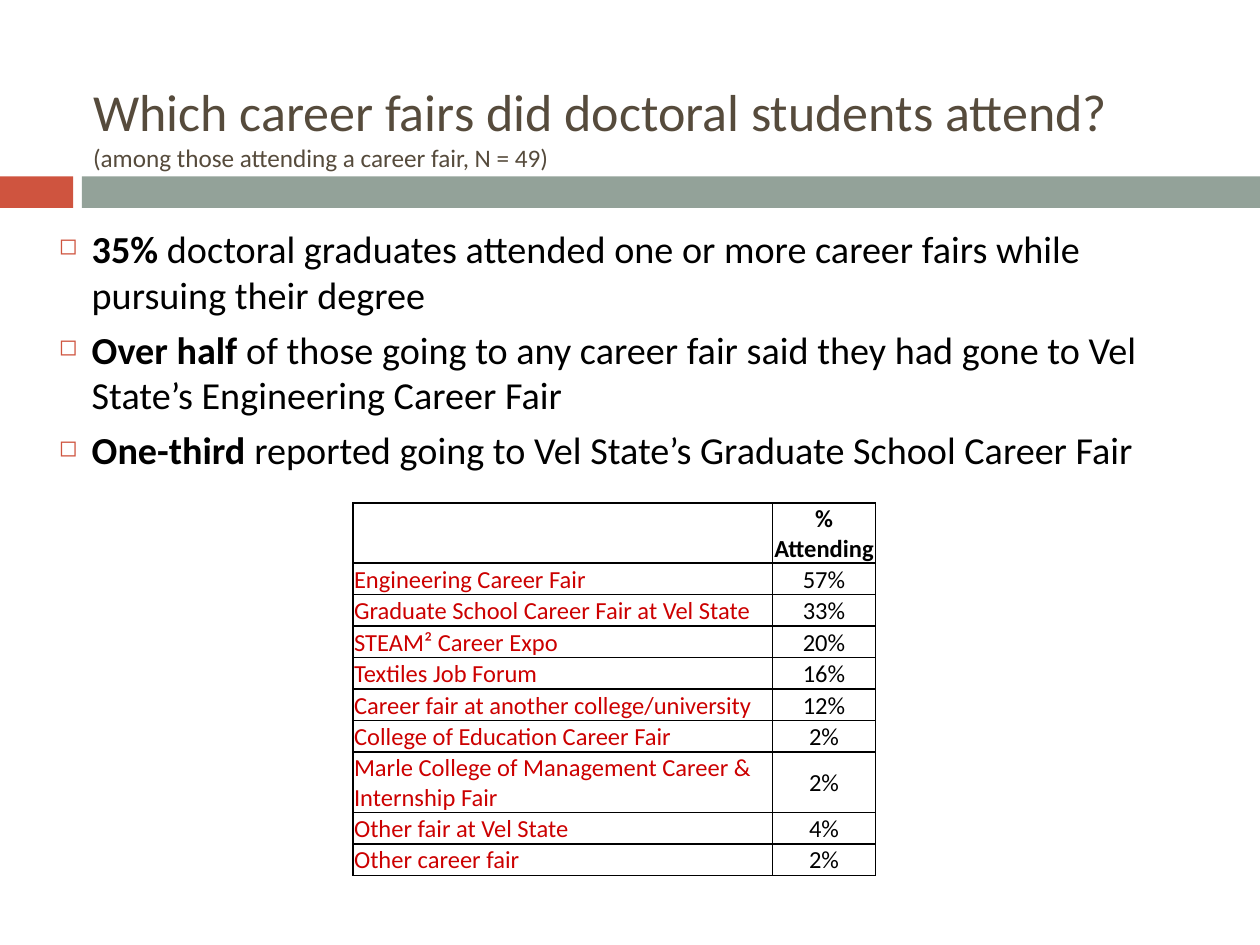
from lxml import etree
from pptx import Presentation, util as u
from pptx.dml.color import RGBColor
from pptx.enum import shapes, text
from pptx.oxml import ns

FONT = "Calibri"
BROWN, RED, SAGE = "564B3C", "CF543F", "93A299"
BLACK, LINK = "000000", "CC0000"

TITLE = "Which career fairs did doctoral students attend?"
NOTE = "(among those attending a career fair, N = 49)"
POINTS = [
    ("35%", " doctoral graduates attended one or more career fairs while pursuing their degree"),
    ("Over half", " of those going to any career fair said they had gone to Vel State’s Engineering Career Fair"),
    ("One-third", " reported going to Vel State’s Graduate School Career Fair"),
]
FAIRS = [
    ("", "% Attending"),
    ("Engineering Career Fair", "57%"),
    ("Graduate School Career Fair at Vel State", "33%"),
    ("STEAM² Career Expo", "20%"),
    ("Textiles Job Forum", "16%"),
    ("Career fair at another college/university", "12%"),
    ("College of Education Career Fair", "2%"),
    ("Marle College of Management Career & Internship Fair", "2%"),
    ("Other fair at Vel State", "4%"),
    ("Other career fair", "2%"),
]
BARS = [(0, 0.58, RED), (0.65, 9.35, SAGE)]
COLS = (3.33, 0.82)
HEAD, ROW = 0.48, 0.25


def color(code):
    return RGBColor.from_string(code)


def write(para, words, size=14, ink=BLACK, bold=False, align=text.PP_ALIGN.LEFT):
    para.alignment = align
    run = para.add_run()
    run.text = words
    font = run.font
    font.name, font.size, font.bold = FONT, u.Pt(size), bold
    font.color.rgb = color(ink)


def box(left, top, width, height, anchor):
    frame = slide.shapes.add_textbox(*map(u.Inches, (left, top, width, height))).text_frame
    frame.word_wrap = True
    frame.vertical_anchor = anchor
    return frame


def child(node, tag, **attrs):
    return etree.SubElement(node, ns.qn(tag), attrs)


def bullet(para):
    props = para._p.get_or_add_pPr()
    props.set("marL", str(u.Inches(0.26)))
    props.set("indent", str(-u.Inches(0.26)))
    child(child(props, "a:buClr"), "a:srgbClr", val=RED)
    child(props, "a:buSzPct", val="60000")
    child(props, "a:buChar", char="◻")


def border(cell):
    props = cell._tc.get_or_add_tcPr()
    for n, side in enumerate(("a:lnL", "a:lnR", "a:lnT", "a:lnB")):
        line = etree.Element(ns.qn(side), w=str(u.Pt(1)))
        child(child(line, "a:solidFill"), "a:srgbClr", val=BLACK)
        props.insert(n, line)


prs = Presentation()
prs.slide_width, prs.slide_height = u.Inches(10), u.Inches(7.5)
slide = prs.slides.add_slide(prs.slide_layouts[6])

# Divider bars
for left, width, fill in BARS:
    bar = slide.shapes.add_shape(shapes.MSO_SHAPE.RECTANGLE, u.Inches(left),
                                 u.Inches(1.4), u.Inches(width), u.Inches(0.25))
    bar.shadow.inherit = False
    bar.fill.solid()
    bar.fill.fore_color.rgb = color(fill)
    bar.line.fill.background()

# Title and its note
para = box(0.64, 0.46, 8.92, 1.08, text.MSO_ANCHOR.MIDDLE).paragraphs[0]
write(para, TITLE, size=29.7, ink=BROWN)
para.add_line_break()
write(para, NOTE, size=14.4, ink=BROWN)

# Key points
frame = box(0.37, 1.74, 9.3, 2.2, text.MSO_ANCHOR.TOP)
for n, (lead, rest) in enumerate(POINTS):
    para = frame.add_paragraph() if n else frame.paragraphs[0]
    para.space_before = u.Pt(5.2)
    write(para, lead, size=21.8, bold=True)
    write(para, rest, size=21.8)
    bullet(para)

# Attendance table
high = HEAD + ROW * (len(FAIRS) - 1)
table = slide.shapes.add_table(len(FAIRS), len(COLS), u.Inches(2.8), u.Inches(3.99),
                               u.Inches(sum(COLS)), u.Inches(high)).table
for col, width in zip(table.columns, COLS):
    col.width = u.Inches(width)
for r, fair in enumerate(FAIRS):
    table.rows[r].height = u.Inches(ROW if r else HEAD)
    for c, words in enumerate(fair):
        cell = table.cell(r, c)
        cell.fill.background()
        border(cell)
        cell.vertical_anchor = text.MSO_ANCHOR.MIDDLE
        cell.margin_left = cell.margin_right = cell.margin_top = u.Inches(0.01)
        cell.margin_bottom = 0
        if words:
            write(cell.text_frame.paragraphs[0], words, bold=r == 0,
                  ink=BLACK if c else LINK,
                  align=text.PP_ALIGN.CENTER if c else text.PP_ALIGN.LEFT)

prs.save("out.pptx")
